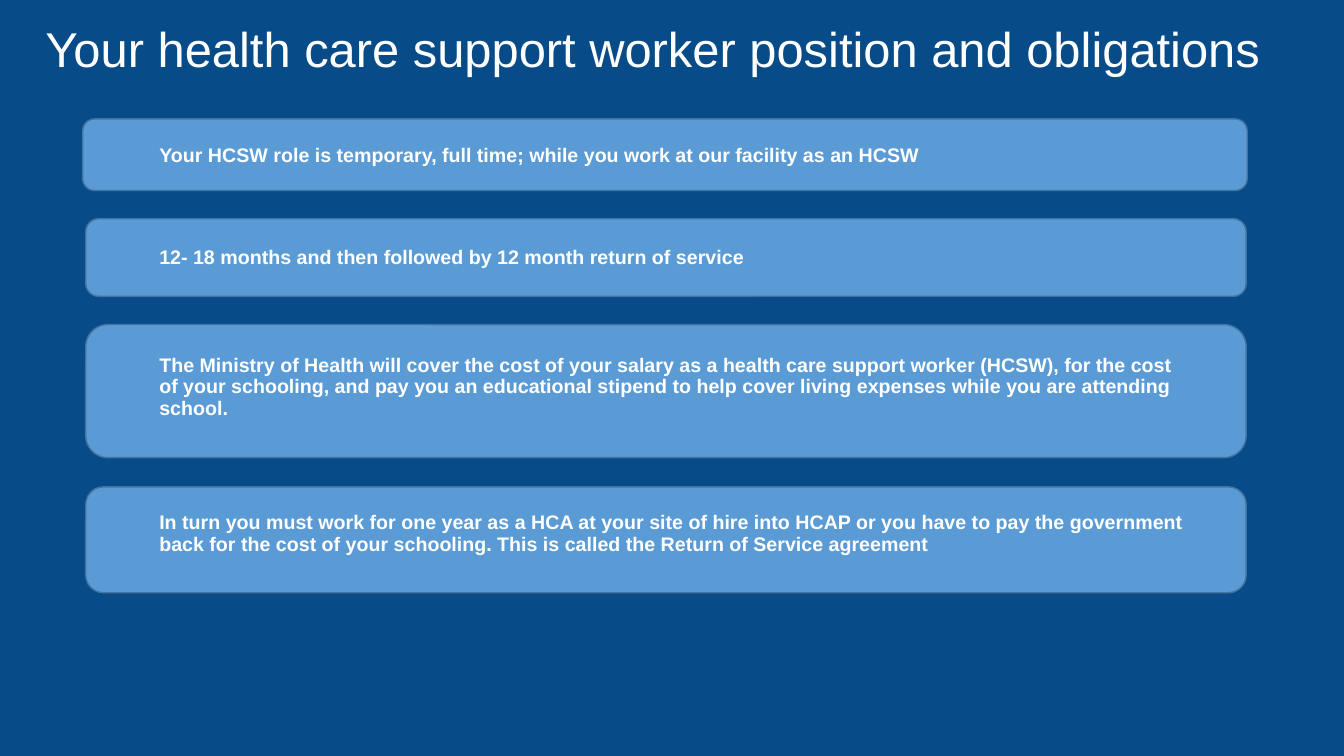
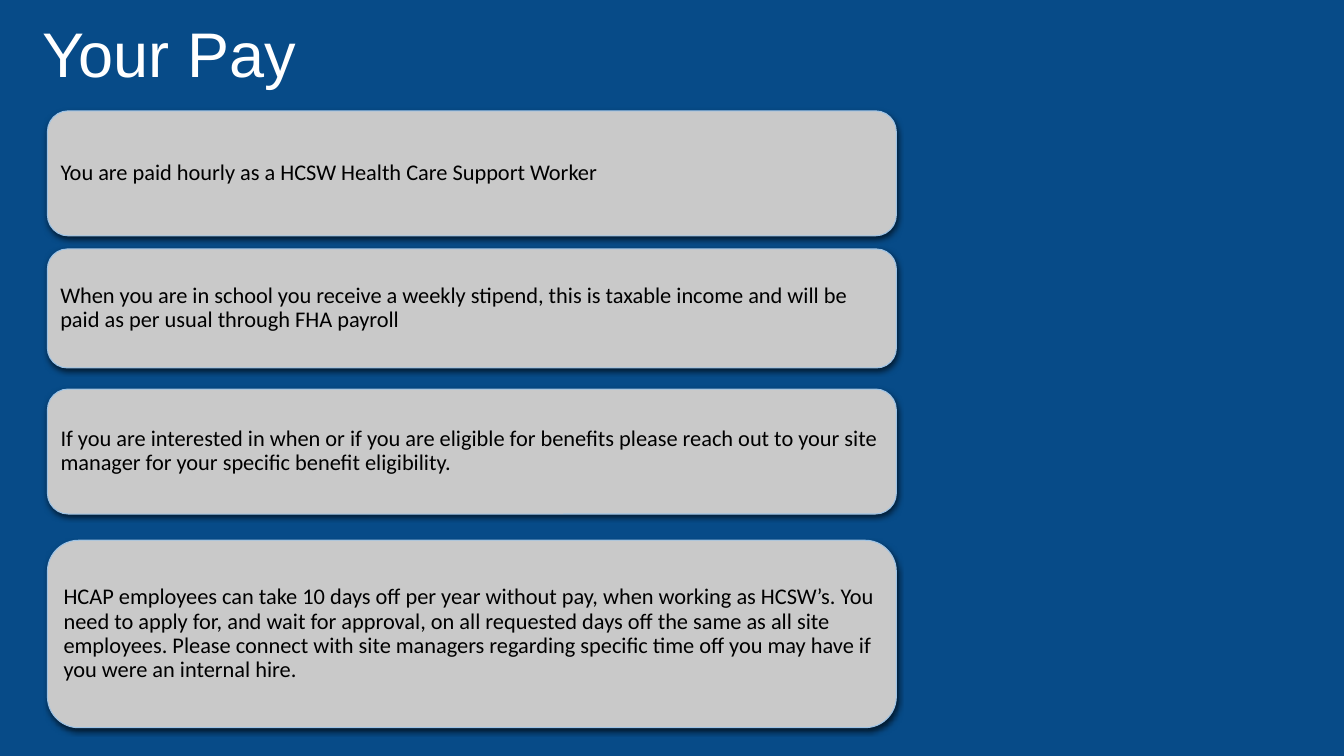
from lxml import etree
from pptx import Presentation
from pptx.dml.color import RGBColor
from pptx.enum import shapes, text
from pptx.oxml import ns
from pptx.util import Inches, Pt

NAVY, WHITE, BLACK = "074B88", "FFFFFF", "000000"
BLUE, EDGE = "5B9BD5", "43739E"
GRAY, RIM = "C9C9C9", "9DC3E6"
BEVEL = 0.0488

DUTIES = [
    (0.82, 1.18, 11.55, 0.71, 1.44,
     "Your HCSW role is temporary, full time; while you work at our facility as an HCSW"),
    (0.85, 2.17, 11.51, 0.77, 2.46,
     "12- 18 months and then followed by 12 month return of service"),
    (0.85, 3.22, 11.51, 1.32, 3.53,
     "The Ministry of Health will cover the cost of your salary as a health care "
     "support worker (HCSW), for the cost of your schooling, and pay you an educational "
     "stipend to help cover living expenses while you are attending school."),
    (0.85, 4.83, 11.51, 1.05, 5.09,
     "In turn you must work for one year as a HCA at your site of hire into HCAP or you "
     "have to pay the government back for the cost of your schooling. This is called the "
     "Return of Service agreement"),
]
PAY = [
    (1.1, 1.24, "You are paid hourly as a HCSW Health Care Support Worker"),
    (2.47, 1.18,
     "When you are in school you receive a weekly stipend, this is taxable income and "
     "will be paid as per usual through FHA payroll"),
    (3.86, 1.24,
     "If you are interested in when or if you are eligible for benefits please reach out "
     "to your site manager for your specific benefit eligibility."),
    (5.36, 1.86,
     "HCAP employees can take 10 days off per year without pay, when working as HCSW’s. "
     "You need to apply for, and wait for approval, on all requested days off the same as "
     "all site employees. Please connect with site managers regarding specific time off "
     "you may have if you were an internal hire."),
]


def rgb(code):
    """Turn a hex string into a colour."""
    return RGBColor.from_string(code)


def write(frame, words, font, size, color, pads, anchor, space=0.9, bold=False):
    """Fill a text frame with one left-aligned paragraph."""
    frame.word_wrap = True
    frame.auto_size = text.MSO_AUTO_SIZE.NONE
    frame.vertical_anchor = anchor
    (frame.margin_left, frame.margin_top,
     frame.margin_right, frame.margin_bottom) = [Inches(pad) for pad in pads]
    para = frame.paragraphs[0]
    para.alignment = text.PP_ALIGN.LEFT
    para.line_spacing = space
    run = para.add_run()
    run.text = words
    run.font.name, run.font.size, run.font.bold = font, Pt(size), bold
    run.font.color.rgb = rgb(color)


def start(deck, words, box, size, space):
    """Add a slide and set its title in the given box."""
    slide = deck.slides.add_slide(deck.slide_layouts[5])
    title = slide.shapes.title
    title.left, title.top, title.width, title.height = [Inches(n) for n in box]
    write(title.text_frame, words, "Arial", size, WHITE,
          (0.1, 0.05, 0.1, 0.05), text.MSO_ANCHOR.TOP, space)
    return slide


def card(slide, box, fill, line, width):
    """Draw a rounded card."""
    shape = slide.shapes.add_shape(
        shapes.MSO_SHAPE.ROUNDED_RECTANGLE, *[Inches(n) for n in box])
    shape.shadow.inherit = False
    shape.fill.solid()
    shape.fill.fore_color.rgb = rgb(fill)
    shape.line.color.rgb = rgb(line)
    shape.line.width = Pt(width)
    return shape


def shade(shape):
    """Give a shape a soft shadow below it."""
    effects = shape.element.spPr.find(ns.qn("a:effectLst"))
    outer = etree.SubElement(effects, ns.qn("a:outerShdw"), blurRad=str(Pt(4.5)),
                             dist=str(Pt(1.5)), dir="5400000", algn="ctr",
                             rotWithShape="0")
    color = etree.SubElement(outer, ns.qn("a:srgbClr"), val=BLACK)
    etree.SubElement(color, ns.qn("a:alpha"), val="63000")


def duties(deck):
    """Build the slide on position and obligations."""
    slide = start(deck, "Your health care support worker position and obligations",
                  (0.35, 0.29, 12.56, 0.76), 34.9, 0.7)
    for left, top, width, height, first, words in DUTIES:
        shape = card(slide, (left, top, width, height), BLUE, EDGE, 1)
        bevel = height * BEVEL
        pads = (1.58 - left - bevel, first - top - bevel,
                left + width - 11.75 - bevel, 0)
        write(shape.text_frame, words, "Arial", 14, WHITE, pads,
              text.MSO_ANCHOR.TOP, bold=True)


def pay(deck):
    """Build the slide on pay."""
    slide = start(deck, "Your Pay", (0.32, 0.24, 8.43, 0.76), 45, 0.8)
    for top, height, words in PAY:
        shape = card(slide, (0.47, top, 8.42, height), GRAY, RIM, 0.75)
        shade(shape)
        write(shape.text_frame, words, "Calibri", 16, BLACK, [0.07] * 4,
              text.MSO_ANCHOR.MIDDLE)


def main():
    """Build and save the deck."""
    deck = Presentation()
    deck.slide_width, deck.slide_height = Inches(13.33), Inches(7.5)
    back = deck.slide_master.background.fill
    back.solid()
    back.fore_color.rgb = rgb(NAVY)
    duties(deck)
    pay(deck)
    deck.save("out.pptx")


if __name__ == "__main__":
    main()
